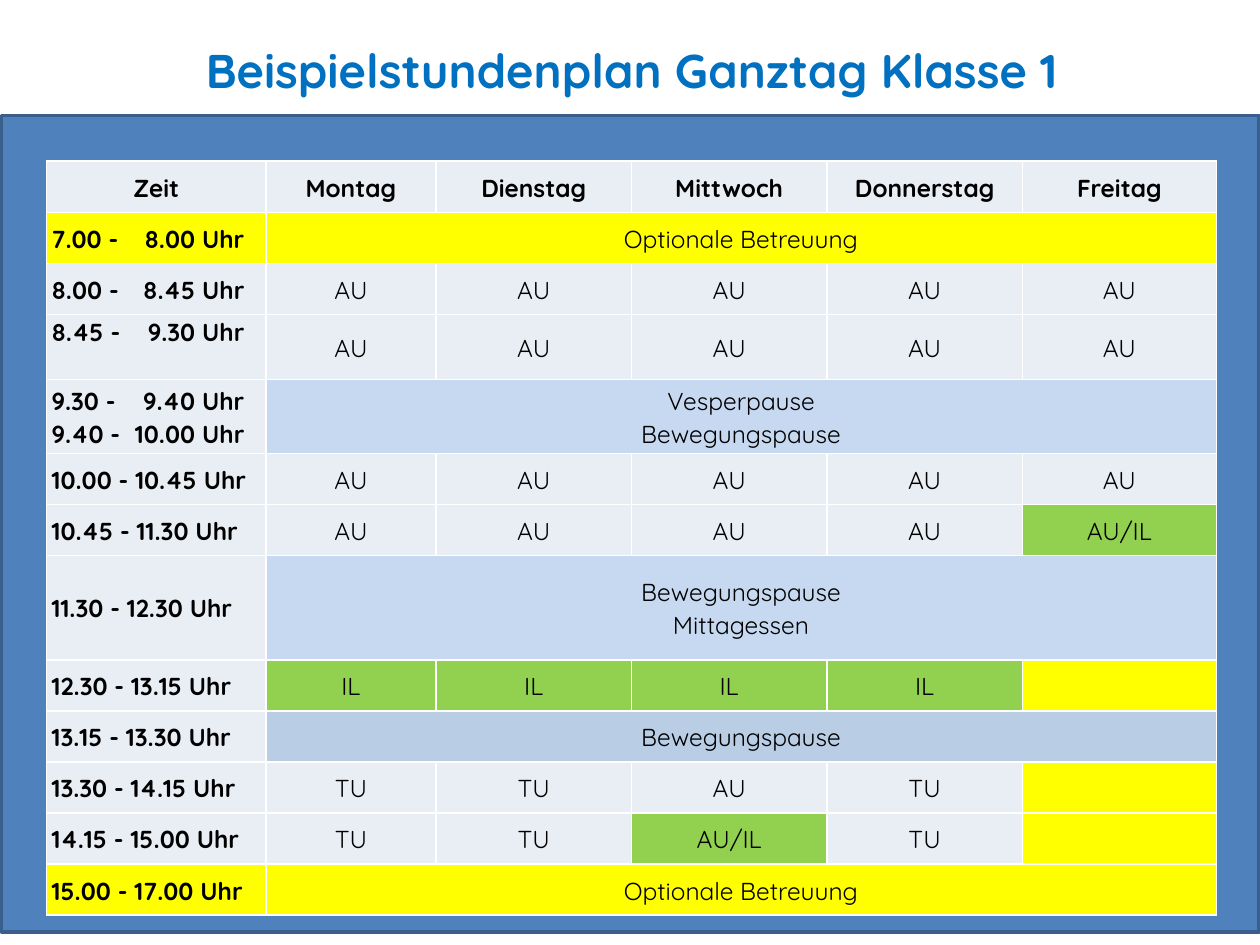
from lxml import etree
from pptx import Presentation
from pptx.dml.color import RGBColor
from pptx.enum.shapes import MSO_SHAPE
from pptx.enum.text import MSO_ANCHOR, PP_ALIGN
from pptx.oxml.ns import qn
from pptx.util import Cm, Pt

RECT = MSO_SHAPE.RECTANGLE
TOP, MIDDLE = MSO_ANCHOR.TOP, MSO_ANCHOR.MIDDLE
LEFT, CENTER = PP_ALIGN.LEFT, PP_ALIGN.CENTER

TITLE_BLUE = RGBColor(0x00, 0x70, 0xC0)
PANEL = RGBColor(0x4F, 0x81, 0xBD)
PANEL_EDGE = RGBColor(0x3A, 0x5F, 0x8C)
BLACK = RGBColor(0x00, 0x00, 0x00)
WHITE = RGBColor(0xFF, 0xFF, 0xFF)
LESSON = RGBColor(0xE9, 0xED, 0xF4)
CARE = RGBColor(0xFF, 0xFF, 0x00)
STUDY = RGBColor(0x92, 0xD0, 0x50)
BREAK = RGBColor(0xC6, 0xD9, 0xF1)
SHORT_BREAK = RGBColor(0xB9, 0xCD, 0xE5)

FONT = "Quicksand"
TIME_TAB = Cm(3.89)
COLUMNS = [4.42, 3.43, 3.94, 3.94, 3.94, 3.91]
ROW = 1.03
HEADER = ["Zeit", "Montag", "Dienstag", "Mittwoch", "Donnerstag", "Freitag"]

# Height, time, then either five lessons or one entry across the week with its fill
SCHEDULE = [
    (ROW, "7.00 -\t8.00 Uhr", "Optionale Betreuung", CARE),
    (ROW, "8.00 -\t8.45 Uhr", ["AU"] * 5, None),
    (1.31, "8.45 -\t9.30 Uhr", ["AU"] * 5, None),
    (1.49, "9.30 -\t9.40 Uhr\n9.40 -\t10.00 Uhr", "Vesperpause\nBewegungspause", BREAK),
    (ROW, "10.00 - 10.45 Uhr", ["AU"] * 5, None),
    (ROW, "10.45 - 11.30 Uhr", ["AU"] * 4 + ["AU/IL"], None),
    (2.1, "11.30 - 12.30 Uhr", "Bewegungspause\nMittagessen", BREAK),
    (ROW, "12.30 - 13.15 Uhr", ["IL"] * 4 + [""], None),
    (ROW, "13.15 - 13.30 Uhr", "Bewegungspause", SHORT_BREAK),
    (ROW, "13.30 - 14.15 Uhr", ["TU", "TU", "AU", "TU", ""], None),
    (ROW, "14.15 - 15.00 Uhr", ["TU", "TU", "AU/IL", "TU", ""], None),
    (ROW, "15.00 - 17.00 Uhr", "Optionale Betreuung", CARE),
]


def add_run(p, text, size, color, bold):
    r = p.add_run()
    r.text = text
    r.font.name = FONT
    r.font.size = Pt(size)
    r.font.bold = bold
    r.font.color.rgb = color


def add_tab_stop(p):
    """Line up the end times at the right."""
    tabs = etree.SubElement(p._p.get_or_add_pPr(), qn("a:tabLst"))
    etree.SubElement(tabs, qn("a:tab"), pos=str(TIME_TAB), algn="r")


def set_borders(cell):
    tc_pr = cell._tc.get_or_add_tcPr()
    for side in ("lnL", "lnR", "lnT", "lnB"):
        ln = etree.SubElement(tc_pr, qn(f"a:{side}"), w=str(Pt(1)))
        fill = etree.SubElement(ln, qn("a:solidFill"))
        etree.SubElement(fill, qn("a:srgbClr"), val=str(WHITE))


def fill_cell(cell, text, fill, align=CENTER, bold=False):
    set_borders(cell)
    cell.fill.solid()
    cell.fill.fore_color.rgb = fill
    cell.vertical_anchor = MIDDLE
    cell.margin_left = cell.margin_right = Cm(0.1)
    cell.margin_top = cell.margin_bottom = 0
    tf = cell.text_frame
    for i, line in enumerate(text.split("\n")):
        p = tf.add_paragraph() if i else tf.paragraphs[0]
        if "\t" in line:
            add_tab_stop(p)
        p.alignment = align
        p.line_spacing = 1.07
        if line:
            add_run(p, line, 14, BLACK, bold)


def lesson_fill(lesson):
    if not lesson:
        return CARE
    return STUDY if "IL" in lesson else LESSON


def add_title(s):
    sp = s.shapes.title
    sp.left, sp.top, sp.width, sp.height = Cm(0.03), Cm(-0.18), Cm(25.4), Cm(3.18)
    tf = sp.text_frame
    tf.vertical_anchor = MIDDLE
    p = tf.paragraphs[0]
    p.alignment = CENTER
    add_run(p, "Beispielstundenplan Ganztag Klasse 1", 27, TITLE_BLUE, True)


def add_panel(s):
    sp = s.shapes.add_shape(RECT, Cm(0.03), Cm(2.33), Cm(25.35), Cm(16.46))
    sp.shadow.inherit = False
    sp.fill.solid()
    sp.fill.fore_color.rgb = PANEL
    sp.line.color.rgb = PANEL_EDGE
    sp.line.width = Pt(2)


def add_timetable(s):
    heights = [ROW] + [entry[0] for entry in SCHEDULE]
    table = s.shapes.add_table(len(heights), len(COLUMNS), Cm(0.94), Cm(3.25),
                               Cm(sum(COLUMNS)), Cm(sum(heights))).table
    table.first_row = table.horz_banding = False
    for column, width in zip(table.columns, COLUMNS):
        column.width = Cm(width)
    for row, height in zip(table.rows, heights):
        row.height = Cm(height)

    for col, name in enumerate(HEADER):
        fill_cell(table.cell(0, col), name, LESSON, bold=True)
    for row, (_, time, content, fill) in enumerate(SCHEDULE, start=1):
        fill_cell(table.cell(row, 0), time, CARE if fill == CARE else LESSON, LEFT, True)
        if fill:
            table.cell(row, 1).merge(table.cell(row, len(COLUMNS) - 1))
            fill_cell(table.cell(row, 1), content, fill)
        else:
            for col, lesson in enumerate(content, start=1):
                fill_cell(table.cell(row, col), lesson, lesson_fill(lesson))
    table.cell(3, 0).vertical_anchor = TOP


def main():
    prs = Presentation()
    prs.slide_width, prs.slide_height = Cm(25.4), Cm(19.05)
    s = prs.slides.add_slide(prs.slide_layouts[5])
    add_title(s)
    add_panel(s)
    add_timetable(s)
    prs.save("out.pptx")


if __name__ == "__main__":
    main()
